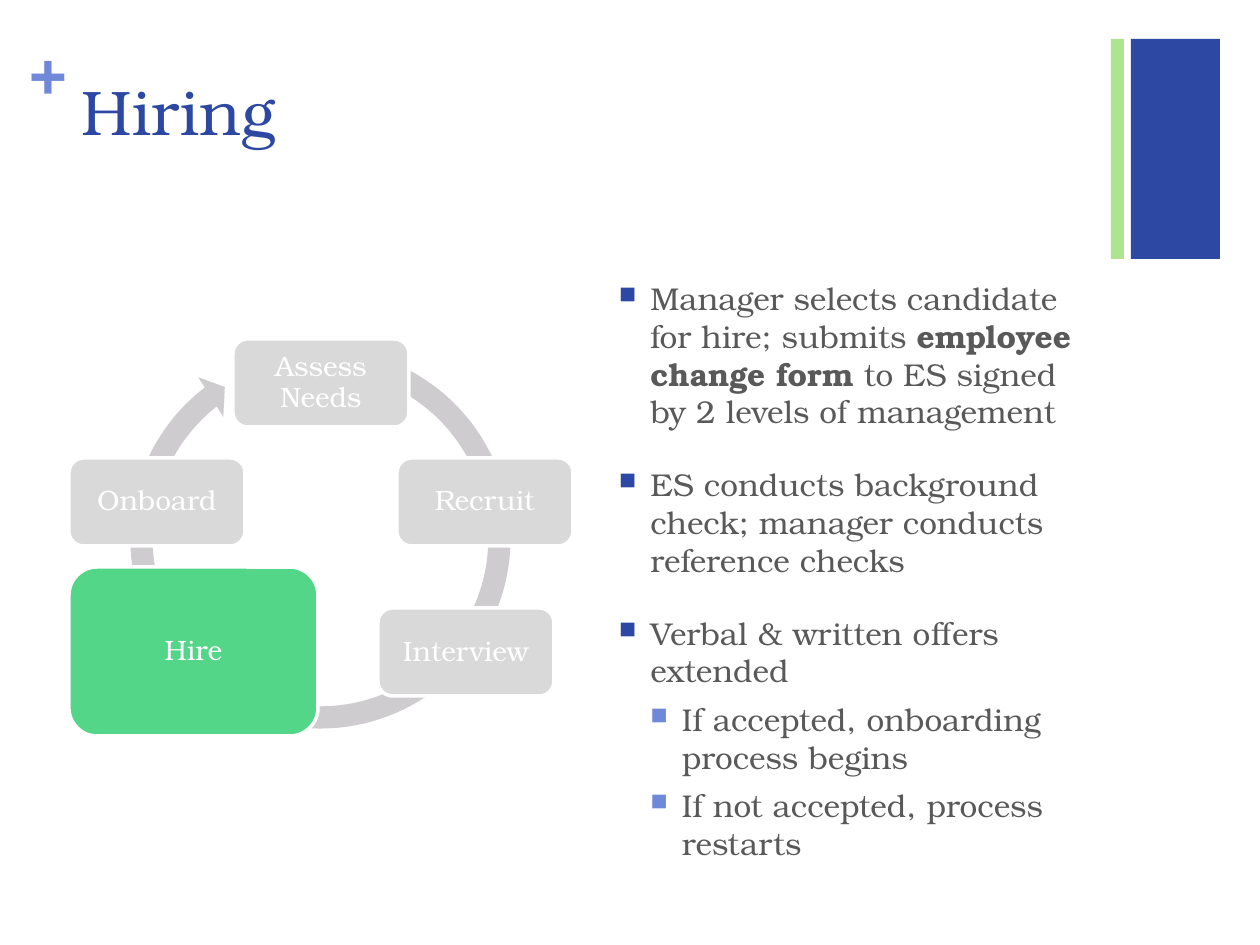
from lxml import etree
from pptx import Presentation
from pptx import util as u
from pptx.dml.color import RGBColor
from pptx.enum import shapes, text
from pptx.oxml.ns import qn

SCALE = 914400 / 126
FONT = "TeX Gyre Bonum"
COLORS = {
    "navy": "2C48A2", "lime": "AEE48E", "periwinkle": "7088D8", "body": "595959",
    "ring": "CECCCF", "idle": "D9D9D9", "active": "53D687", "white": "FFFFFF",
}


def add_block(page, kind, frame, fill, outline=None):
    block = page.shapes.add_shape(kind, *[u.Emu(round(v * SCALE)) for v in frame])
    block.shadow.inherit = False
    block.fill.solid()
    block.fill.fore_color.rgb = RGBColor.from_string(COLORS[fill])
    if outline:
        block.line.color.rgb = RGBColor.from_string(COLORS[outline])
        block.line.width = u.Pt(2)
    else:
        block.line.fill.background()
    return block


def add_span(para, words, size, color, bold=False):
    span = para.add_run()
    span.text = words
    span.font.color.rgb = RGBColor.from_string(COLORS[color])
    for name, value in {"name": FONT, "size": u.Pt(size), "bold": bold}.items():
        setattr(span.font, name, value)


deck = Presentation()
deck.slide_width, deck.slide_height = u.Inches(10), u.Inches(7.5)
page = deck.slides.add_slide(deck.slide_layouts[6])

for left, width, fill in [(1131, 89, "navy"), (1111, 13, "lime")]:
    add_block(page, shapes.MSO_SHAPE.RECTANGLE, (left, 39, width, 220), fill)

frames = []
for frame, inset, wrap in [
    ((30, 31, 37, 77), (0, 0), False),
    ((69, 67, 1041, 154), (13, 6), True),
    ((606, 273, 504, 571), (13, 6), True),
]:
    box = page.shapes.add_textbox(*[u.Emu(round(v * SCALE)) for v in frame])
    side, end = [u.Emu(round(v * SCALE)) for v in inset]
    settings = {
        "margin_left": side, "margin_right": side, "margin_top": end,
        "margin_bottom": end, "word_wrap": wrap,
    }
    for name, value in settings.items():
        setattr(box.text_frame, name, value)
    frames.append(box.text_frame)
plus, title, body = frames
add_span(plus.paragraphs[0], "+", 36, "periwinkle", True)
add_span(title.paragraphs[0], "Hiring", 36, "navy")

steps = [
    (0, [("Manager selects candidate for hire; submits ", False),
         ("employee change form", True),
         (" to ES signed by 2 levels of management", False)]),
    (0, [("ES conducts background check; manager conducts reference checks", False)]),
    (0, [("Verbal & written offers extended", False)]),
    (1, [("If accepted, onboarding process begins", False)]),
    (1, [("If not accepted, process restarts", False)]),
]
for index, (level, spans) in enumerate(steps):
    para = body.add_paragraph() if index else body.paragraphs[0]
    para.level = level
    para.space_before = u.Pt((20, 6)[level])
    for words, bold in spans:
        add_span(para, words, 18, "body", bold)
    props = para._p.get_or_add_pPr()
    props.set("marL", str(u.Inches(0.25 * (level + 1))))
    props.set("indent", str(u.Inches(-0.25)))
    bullet_color = etree.SubElement(props, qn("a:buClr"))
    bullet = COLORS[("navy", "periwinkle")[level]]
    etree.SubElement(bullet_color, qn("a:srgbClr"), val=bullet)
    etree.SubElement(props, qn("a:buSzPct"), val="75000")
    etree.SubElement(props, qn("a:buChar"), char="■")

ring = add_block(page, shapes.MSO_SHAPE.CIRCULAR_ARROW, (118, 336, 405, 405), "ring")
for index, value in enumerate([0.055, 3.307, 139.325, 172.914, 0.058]):
    ring.adjustments[index] = value

for label, left, top, width, height, fill in [
    ("Assess Needs", 233, 339, 176, 88, "idle"),
    ("Recruit", 397, 458, 176, 88, "idle"),
    ("Interview", 378, 608, 176, 88, "idle"),
    ("Hire", 69, 567, 249, 169, "active"),
    ("Onboard", 69, 458, 176, 88, "idle"),
]:
    node = add_block(page, shapes.MSO_SHAPE.ROUNDED_RECTANGLE,
                     (left, top, width, height), fill, "white")
    inset = u.Emu(round(9 * SCALE))
    settings = {
        "margin_left": inset, "margin_right": inset, "margin_top": inset,
        "margin_bottom": inset, "word_wrap": True,
        "vertical_anchor": text.MSO_ANCHOR.MIDDLE,
    }
    for name, value in settings.items():
        setattr(node.text_frame, name, value)
    para = node.text_frame.paragraphs[0]
    para.alignment = text.PP_ALIGN.CENTER
    para.line_spacing = 0.9
    add_span(para, label, 16, "white")

deck.save("out.pptx")
